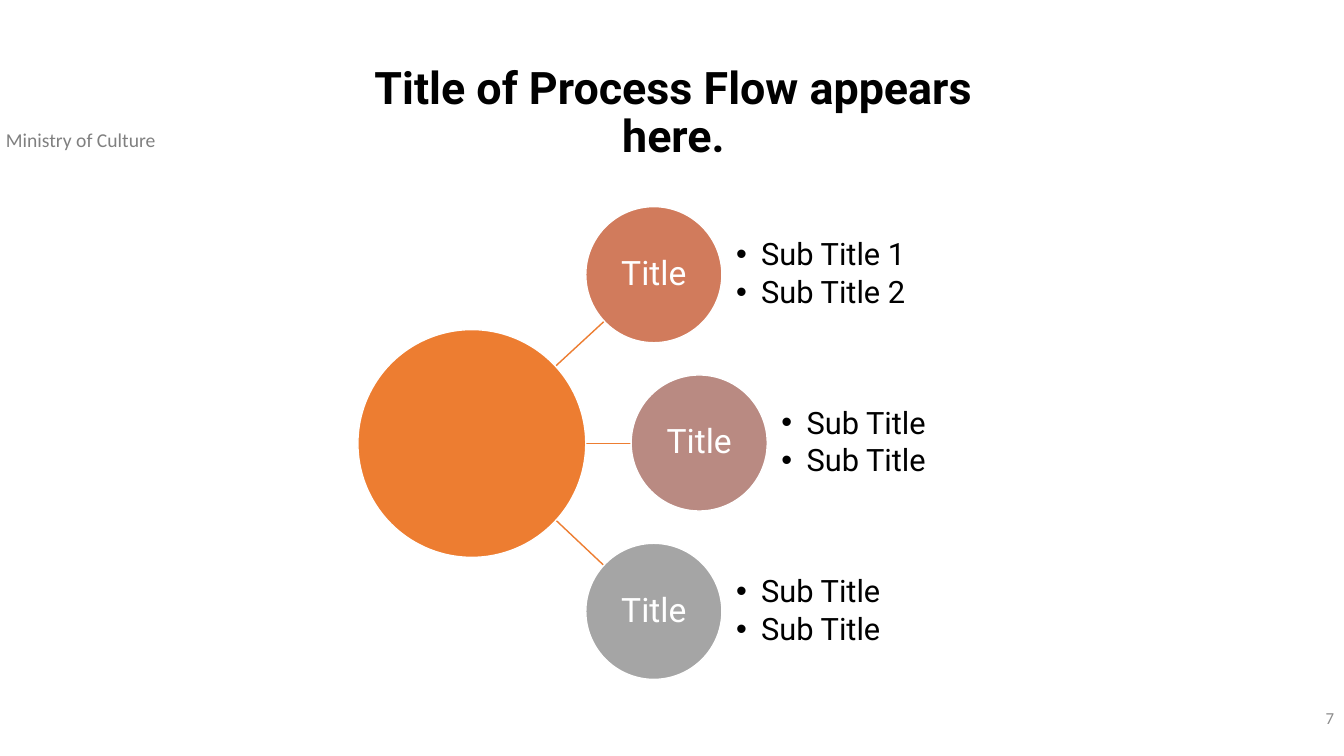
import pptx
import pptx.util
import pptx.dml.color
import pptx.enum.shapes
import pptx.enum.text
import pptx.oxml.ns
import lxml.etree

Inches = pptx.util.Inches
Pt = pptx.util.Pt
ALIGN = pptx.enum.text.PP_ALIGN
ANCHOR = pptx.enum.text.MSO_ANCHOR
qn = pptx.oxml.ns.qn


def tint(hue):
    return pptx.dml.color.RGBColor.from_string(hue)


def style(frame, face, size, hue, align=ALIGN.LEFT, anchor=ANCHOR.TOP, bold=False, inset=None):
    frame.word_wrap = True
    frame.auto_size = pptx.enum.text.MSO_AUTO_SIZE.NONE
    frame.vertical_anchor = anchor
    if inset is not None:
        frame.margin_left = frame.margin_right = Inches(inset)
        frame.margin_top = frame.margin_bottom = Inches(inset)
    for para in frame.paragraphs:
        para.alignment = align
        para.space_before = Pt(0)
        for run in para.runs:
            run.font.name = face
            run.font.size = Pt(size)
            run.font.bold = bold
            run.font.color.rgb = tint(hue)


deck = pptx.Presentation()
deck.slide_width = Inches(13.33)
deck.slide_height = Inches(7.5)
slide = deck.slides.add_slide(deck.slide_layouts[4])
shapes = slide.shapes
title, *lists = slide.placeholders

# Title
title.left, title.top = Inches(3.28), Inches(0.6)
title.width, title.height = Inches(6.8), Inches(1.07)
title.text_frame.text = "Title of Process Flow appears here."
style(title.text_frame, "Roboto", 32, "000000", ALIGN.CENTER, bold=True)
title.text_frame.paragraphs[0].line_spacing = 0.9

# Ministry name and page number
labels = [
    ("Ministry of Culture", -0.04, 1.22, 2.9, 0.34, 14, "808080", ALIGN.LEFT, ANCHOR.TOP),
    ("7", 10.33, 6.92, 3, 0.4, 12, "8C8C8C", ALIGN.RIGHT, ANCHOR.MIDDLE),
]
for text, left, top, width, height, size, hue, align, anchor in labels:
    box = shapes.add_textbox(Inches(left), Inches(top), Inches(width), Inches(height))
    box.text_frame.text = text
    style(box.text_frame, "Calibri", size, hue, align, anchor)

# Spokes from the hub
for x1, y1, x2, y2 in [(5.47, 3.67, 5.99, 3.19), (5.81, 4.4, 6.26, 4.4), (5.47, 5.12, 5.99, 5.61)]:
    spoke = shapes.add_connector(pptx.enum.shapes.MSO_CONNECTOR.STRAIGHT,
                                 Inches(x1), Inches(y1), Inches(x2), Inches(y2))
    spoke.line.color.rgb = tint("ED7D31")
    spoke.line.width = Pt(1)
    lxml.etree.SubElement(spoke._element.spPr, qn("a:effectLst"))

# Hub and the three steps
span = 1.35
steps = [
    (5.81, "D17B5C", ["Sub Title 1", "Sub Title 2"]),
    (6.26, "B98A82", ["Sub Title", "Sub Title"]),
    (5.81, "A5A5A5", ["Sub Title", "Sub Title"]),
]
discs = [(3.55, 3.27, 2.26, "ED7D31", "")]
for row, (left, hue, items) in enumerate(steps):
    discs.append((left, 2.05 + 1.67 * row, span, hue, "Title"))

for left, top, size, hue, text in discs:
    disc = shapes.add_shape(pptx.enum.shapes.MSO_SHAPE.OVAL,
                            Inches(left), Inches(top), Inches(size), Inches(size))
    disc.shadow.inherit = False
    disc.fill.solid()
    disc.fill.fore_color.rgb = tint(hue)
    disc.line.color.rgb = tint("FFFFFF")
    disc.line.width = Pt(1)
    if text:
        disc.text_frame.text = text
        style(disc.text_frame, "Roboto", 24, "FFFFFF", ALIGN.CENTER, ANCHOR.MIDDLE, inset=0.02)
        disc.text_frame.paragraphs[0].line_spacing = 0.9

# Bullet lists beside the steps
for row, (left, hue, items) in enumerate(steps):
    body = lists[row]
    body.left, body.top = Inches(left + 1.49), Inches(2.05 + 1.67 * row)
    body.width, body.height = Inches(2.03), Inches(span)
    body.text_frame.text = "\n".join(items)
    for para in body.text_frame.paragraphs:
        props = para._p.get_or_add_pPr()
        props.set("marL", str(Inches(0.25)))
        props.set("indent", str(Inches(-0.25)))
        lxml.etree.SubElement(props, qn("a:buFont")).set("typeface", "Arial")
        lxml.etree.SubElement(props, qn("a:buChar")).set("char", "•")
        para.line_spacing = 0.9
        para.space_after = Pt(3.3)
    style(body.text_frame, "Roboto", 22, "000000", anchor=ANCHOR.MIDDLE, inset=0)

# Drop the unused placeholder
spare = lists[3]._element
spare.getparent().remove(spare)

deck.save("out.pptx")
